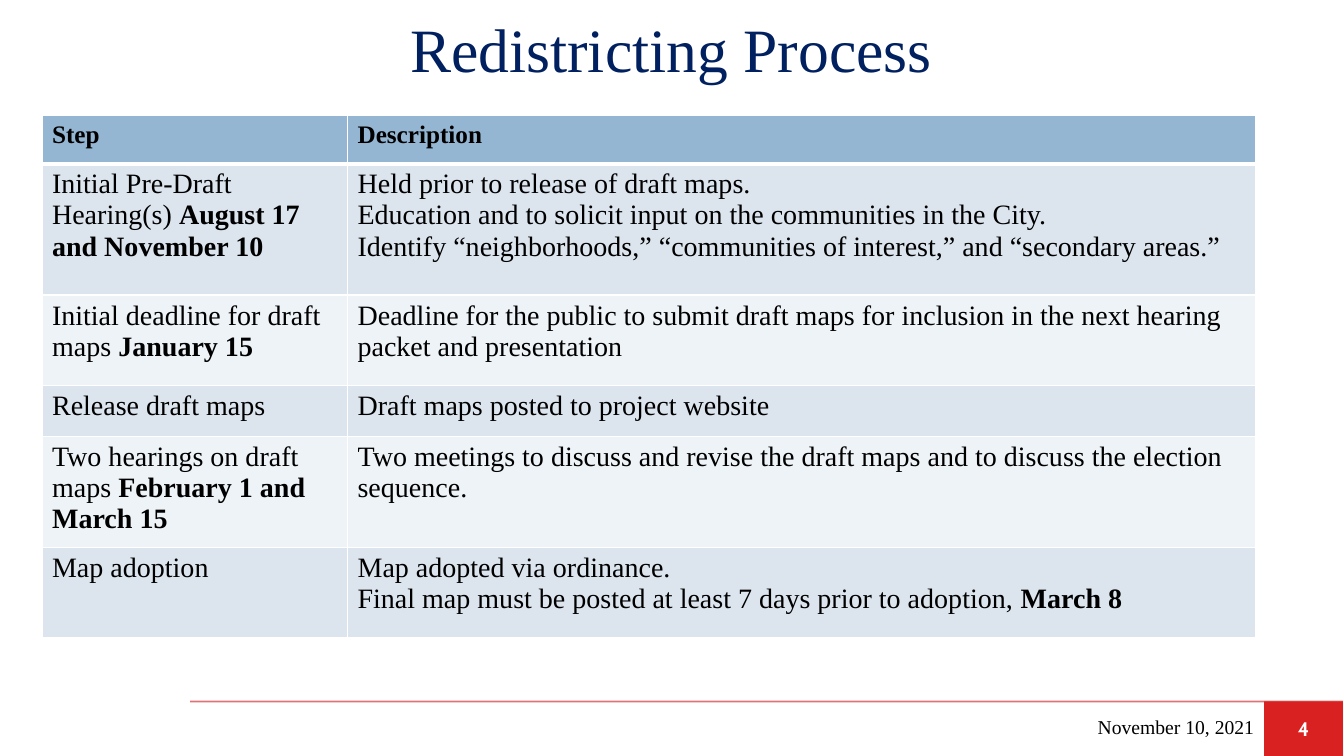
import pptx
import pptx.dml.color
import pptx.enum.shapes
import pptx.enum.text
import pptx.oxml
import pptx.oxml.ns
import pptx.util
from dataclasses import dataclass

PX = 9525
ALIGN = pptx.enum.text.PP_ALIGN
ANCHOR = pptx.enum.text.MSO_ANCHOR


@dataclass(frozen=True)
class Theme:
    """Colours, fonts and type sizes of the slide."""
    navy: str = "002060"
    black: str = "000000"
    white: str = "FFFFFF"
    rule: str = "C80000"
    red: str = "D92121"
    header: str = "94B6D2"
    bands: tuple = ("DCE5EE", "EEF3F7")
    serif: str = "Times New Roman"
    sans: str = "Cabin"
    title_size: int = 44
    body_size: int = 20
    header_size: int = 18
    footer_size: int = 14


THEME = Theme()
COLUMNS = (291, 865)
ROW_HEIGHTS = (46, 125, 86, 49, 86, 86)
STEPS = (
    ("**Step**", "**Description**"),
    ("Initial Pre-Draft Hearing(s) **August 17 and November 10**",
     "Held prior to release of draft maps.\n"
     "Education and to solicit input on the communities in the City.\n"
     "Identify “neighborhoods,” “communities of interest,” and “secondary areas.”"),
    ("Initial deadline for draft maps **January 15**",
     "Deadline for the public to submit draft maps for inclusion in the next "
     "hearing packet and presentation"),
    ("Release draft maps", "Draft maps posted to project website"),
    ("Two hearings on draft maps **February 1 and March 15**",
     "Two meetings to discuss and revise the draft maps and to discuss the "
     "election sequence."),
    ("Map adoption",
     "Map adopted via ordinance.\n"
     "Final map must be posted at least 7 days prior to adoption, **March 8**"),
)


def emu(*lengths):
    """Turn px lengths into EMU."""
    return [pptx.util.Emu(n * PX) for n in lengths]


def rgb(value):
    """Return the colour object for a hex value."""
    return pptx.dml.color.RGBColor.from_string(value)


def write(tf, text, size, color=THEME.black, font=THEME.serif,
          align=ALIGN.LEFT, anchor=ANCHOR.MIDDLE):
    """Write text, one paragraph a line, with ** around bold runs."""
    tf.word_wrap = True
    tf.vertical_anchor = anchor
    for i, line in enumerate(text.split("\n")):
        p = tf.add_paragraph() if i else tf.paragraphs[0]
        p.alignment = align
        for j, part in enumerate(line.split("**")):
            if part:
                r = p.add_run()
                r.text = part
                r.font.size = pptx.util.Pt(size)
                r.font.name = font
                r.font.bold = j % 2 == 1
                r.font.color.rgb = rgb(color)


def set_borders(cell, bottom):
    """Draw white cell borders, with the bottom one of the given width."""
    tcPr = cell._tc.get_or_add_tcPr()
    for side, width in (("L", 1), ("R", 1), ("T", 1), ("B", bottom)):
        tcPr.append(pptx.oxml.parse_xml(
            f'<a:ln{side} {pptx.oxml.ns.nsdecls("a")} w="{pptx.util.Pt(width)}">'
            f'<a:solidFill><a:srgbClr val="{THEME.white}"/></a:solidFill>'
            f'</a:ln{side}>'))


def add_title(s, x, y, w, h):
    """Place the slide title."""
    sp = s.shapes.title
    sp.left, sp.top, sp.width, sp.height = emu(x, y, w, h)
    sp.text_frame.auto_size = pptx.enum.text.MSO_AUTO_SIZE.NONE
    write(sp.text_frame, "Redistricting Process", THEME.title_size,
          color=THEME.navy, align=ALIGN.CENTER)


def add_steps(s, x, y, w, h):
    """Place the table of process steps."""
    table = s.shapes.add_table(len(STEPS), len(COLUMNS), *emu(x, y, w, h)).table
    for col, width in zip(table.columns, emu(*COLUMNS)):
        col.width = width
    for row, height in zip(table.rows, emu(*ROW_HEIGHTS)):
        row.height = height
    for i, texts in enumerate(STEPS):
        fill = THEME.bands[(i - 1) % 2] if i else THEME.header
        size = THEME.body_size if i else THEME.header_size
        for j, text in enumerate(texts):
            cell = table.cell(i, j)
            set_borders(cell, 1 if i else 3)
            cell.fill.solid()
            cell.fill.fore_color.rgb = rgb(fill)
            write(cell.text_frame, text, size, anchor=None)


def add_footer(s, x, y, w, h):
    """Place the rule, the date and the page number."""
    number_w, date_w = 75, 374
    rule = s.shapes.add_connector(pptx.enum.shapes.MSO_CONNECTOR.STRAIGHT,
                                  *emu(x, y, x + w, y))
    rule.line.width = pptx.util.Pt(1.25)
    rule.line.color.rgb = rgb(THEME.rule)
    spPr = rule._element.spPr
    color = spPr.find(".//" + pptx.oxml.ns.qn("a:srgbClr"))
    color.append(pptx.oxml.parse_xml(
        f'<a:alpha {pptx.oxml.ns.nsdecls("a")} val="55000"/>'))
    spPr.append(pptx.oxml.parse_xml(
        f'<a:effectLst {pptx.oxml.ns.nsdecls("a")}/>'))

    left = x + w - number_w
    number = s.shapes.add_shape(pptx.enum.shapes.MSO_SHAPE.RECTANGLE,
                                *emu(left, y, number_w, h))
    number.shadow.inherit = False
    number.fill.solid()
    number.fill.fore_color.rgb = rgb(THEME.red)
    number.line.fill.background()
    write(number.text_frame, "**4**", THEME.footer_size, color=THEME.white,
          font=THEME.sans, align=ALIGN.CENTER)

    date = s.shapes.add_textbox(*emu(left - date_w, y + 5, date_w, 38))
    write(date.text_frame, "November 10, 2021", THEME.footer_size,
          align=ALIGN.RIGHT)


def main():
    """Build the slide and save it."""
    prs = pptx.Presentation()
    prs.slide_width, prs.slide_height = emu(1280, 720)
    s = prs.slides.add_slide(prs.slide_layouts[5])
    add_footer(s, 181, 668, 1098, 52)
    add_title(s, 1, 0, 1277, 91)
    add_steps(s, 40, 110, sum(COLUMNS), sum(ROW_HEIGHTS))
    prs.save("out.pptx")


if __name__ == "__main__":
    main()
